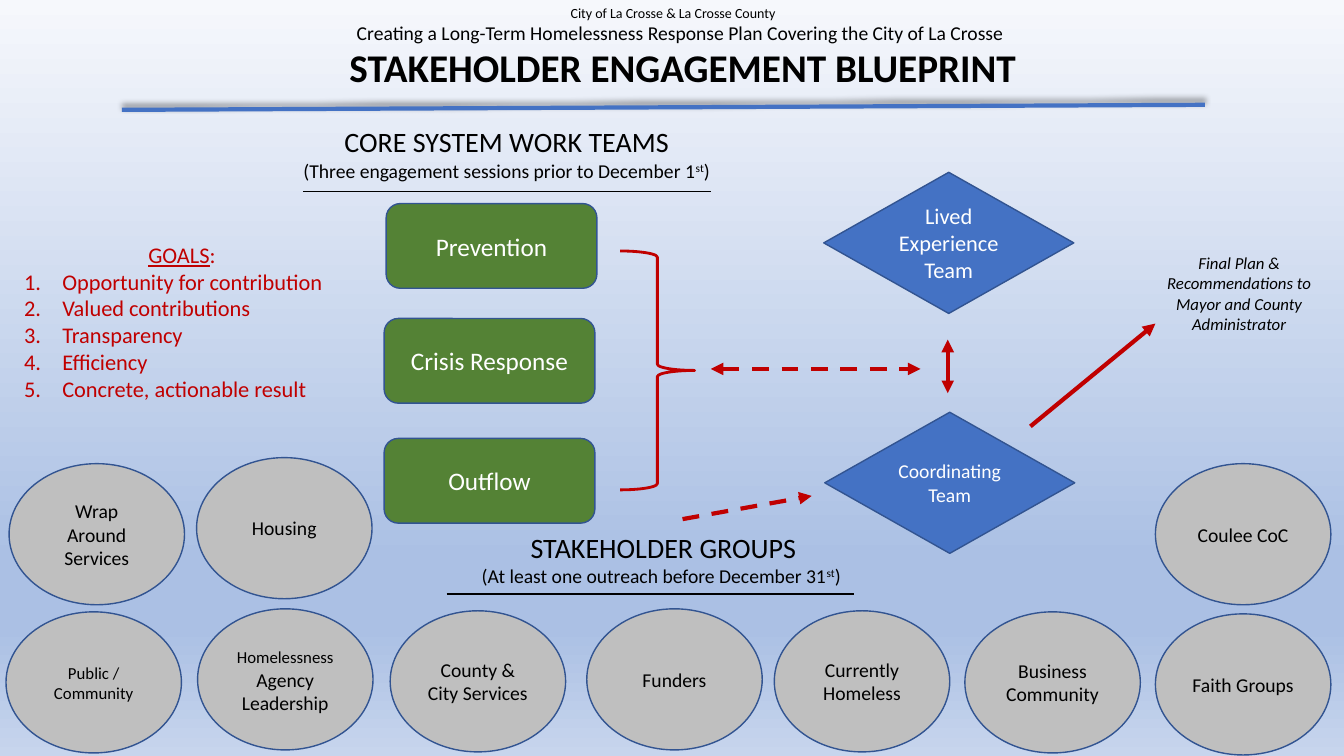
from lxml import etree
from pptx import Presentation
from pptx.dml.color import RGBColor
from pptx.enum.dml import MSO_LINE
from pptx.enum.shapes import MSO_CONNECTOR, MSO_SHAPE as SHAPE
from pptx.enum.text import MSO_ANCHOR, MSO_AUTO_SIZE, PP_ALIGN as ALIGN
from pptx.oxml import parse_xml
from pptx.oxml.ns import qn
from pptx.util import Inches, Pt

COLORS = {
    "black": "000000", "white": "FFFFFF", "red": "C00000", "blue": "4472C4",
    "outline": "325491", "green": "548235", "gray": "BFBFBF",
}
SKY = [(0, "F6F8FC"), (74, "ABC0E4"), (83, "ABC0E4"), (100, "C7D5ED")]
A_NS = "http://schemas.openxmlformats.org/drawingml/2006/main"


def rgb(name):
    return RGBColor.from_string(COLORS[name])


def add_line(slide, x1, y1, x2, y2, color="black", width=1.25,
             dash=False, head=False, tail=False):
    c = slide.shapes.add_connector(
        MSO_CONNECTOR.STRAIGHT, Inches(x1), Inches(y1), Inches(x2), Inches(y2))
    c.line.color.rgb = rgb(color)
    c.line.width = Pt(width)
    if dash:
        c.line.dash_style = MSO_LINE.DASH
    ln = c.line._get_or_add_ln()
    for tag, wanted in (("a:headEnd", head), ("a:tailEnd", tail)):
        if wanted:
            etree.SubElement(ln, qn(tag)).set("type", "triangle")
    etree.SubElement(c._element.spPr, qn("a:effectLst"))
    return c


def write(p, parts, size, color="black", align=ALIGN.CENTER):
    p.alignment = align
    p.font.name = "Calibri"
    p.font.size = Pt(size)
    p.font.color.rgb = rgb(color)
    runs = []
    for part in parts:
        r = p.add_run()
        r.text = part
        runs.append(r)
    return runs


def paragraphs(tf, count):
    return [tf.paragraphs[0]] + [tf.add_paragraph() for _ in range(count - 1)]


def add_text(slide, x, y, w, h):
    tf = slide.shapes.add_textbox(
        Inches(x), Inches(y), Inches(w), Inches(h)).text_frame
    tf.word_wrap = True
    tf.auto_size = MSO_AUTO_SIZE.SHAPE_TO_FIT_TEXT
    return tf


def add_node(slide, kind, x, y, w, h, lines, fill, color, size):
    sp = slide.shapes.add_shape(kind, Inches(x), Inches(y), Inches(w), Inches(h))
    sp.shadow.inherit = False
    sp.fill.solid()
    sp.fill.fore_color.rgb = rgb(fill)
    sp.line.color.rgb = rgb("outline")
    sp.line.width = Pt(1)
    tf = sp.text_frame
    tf.word_wrap = True
    tf.vertical_anchor = MSO_ANCHOR.MIDDLE
    for p, line in zip(paragraphs(tf, len(lines)), lines):
        write(p, [line], size, color)
    return sp


def paint_background(slide):
    fill = slide.background.fill
    fill.gradient()
    grad = slide._element.cSld.find(".//" + qn("a:gradFill"))
    stops = "".join(
        f'<a:gs pos="{pos * 1000}"><a:srgbClr val="{color}"/></a:gs>'
        for pos, color in SKY)
    new = parse_xml(
        f'<a:gradFill xmlns:a="{A_NS}" rotWithShape="1"><a:gsLst>{stops}</a:gsLst>'
        '<a:lin ang="5400000" scaled="0"/></a:gradFill>')
    grad.getparent().replace(grad, new)


def header(slide, x, y, w):
    rows = [
        (-0.08, 0, 0.27, 10, "City of La Crosse & La Crosse County "),
        (0, 0.16, 0.34, 14, "Creating a Long-Term Homelessness Response Plan "
                            "Covering the City of La Crosse "),
        (0, 0.38, 0.57, 28, "STAKEHOLDER ENGAGEMENT BLUEPRINT"),
    ]
    for dx, dy, h, size, text in rows:
        p = add_text(slide, x + dx, y + dy, w, h).paragraphs[0]
        write(p, [text], size)
    p.font.bold = True
    rule = add_line(slide, x + 1.1, y + 1.09, x + 11.84, y + 1.04, "blue", 3)
    rule._element.spPr.find(qn("a:effectLst")).append(parse_xml(
        f'<a:outerShdw xmlns:a="{A_NS}" blurRad="50800" dist="38100" '
        'dir="16200000" algn="b" rotWithShape="0"><a:srgbClr val="000000">'
        '<a:alpha val="40000"/></a:srgbClr></a:outerShdw>'))


def section_title(slide, x, y, w, title, note, rule_x, rule_y):
    tf = add_text(slide, x, y, w, 0.67)
    top, bottom = paragraphs(tf, 2)
    write(top, [title], 20)
    runs = write(bottom, note, 14)
    runs[1]._r.get_or_add_rPr().set("baseline", "30000")
    add_line(slide, rule_x, rule_y, rule_x + 4.04, rule_y)


def work_teams(slide, x, y):
    section_title(slide, x - 1.07, y - 0.83, 4.57, "CORE SYSTEM WORK TEAMS",
                  ["(Three engagement sessions prior to December 1", "st", ")"],
                  x - 0.8, y - 0.12)
    teams = [("Prevention", 0.02, 0), ("Crisis Response", 0, 1.14), ("Outflow", 0, 2.33)]
    for name, dx, dy in teams:
        add_node(slide, SHAPE.ROUNDED_RECTANGLE, x + dx, y + dy, 2.09, 0.84,
                 [name], "green", "white", 18)
    brace = slide.shapes.add_shape(SHAPE.RIGHT_BRACE, Inches(x + 2.34),
                                   Inches(y + 0.47), Inches(0.74), Inches(2.37))
    brace.shadow.inherit = False
    brace.fill.background()
    brace.line.color.rgb = rgb("red")
    brace.line.width = Pt(2)


def goals(slide, x, y, w, h):
    items = ["Opportunity for contribution", "Valued contributions",
             "Transparency", "Efficiency", "Concrete, actionable result"]
    first, *rest = paragraphs(add_text(slide, x, y, w, h), len(items) + 1)
    write(first, ["GOALS", ":"], 16, "red")[0].font.underline = True
    for p, item in zip(rest, items):
        write(p, [item], 16, "red", ALIGN.LEFT)
        pPr = p._p.get_or_add_pPr()
        pPr.set("marL", str(Inches(0.38)))
        pPr.set("indent", str(-Inches(0.38)))
        pPr.insert(0, parse_xml(
            f'<a:buAutoNum xmlns:a="{A_NS}" type="arabicPeriod"/>'))


def decision_flow(slide, x, y):
    diamonds = [(0, 0, 16, ["Lived Experience", "Team"]),
                (0.01, 2.38, 14, ["Coordinating", "Team"])]
    for dx, dy, size, lines in diamonds:
        add_node(slide, SHAPE.FLOWCHART_DECISION, x + dx, y + dy, 2.48, 1.4,
                 lines, "blue", "white", size)
    arrows = [
        (1.23, 1.66, 1.23, 2.19, False, True),
        (2.05, 2.52, 3.29, 1.5, False, False),
        (-1.4, 3.44, -0.12, 3.21, True, False),
        (-1.12, 1.95, 0.96, 1.95, True, True),
    ]
    for x1, y1, x2, y2, dash, both in arrows:
        add_line(slide, x + x1, y + y1, x + x2, y + y2, "red", 3, dash, both, True)
    p = add_text(slide, x + 3.17, y + 0.75, 1.9, 0.91).paragraphs[0]
    write(p, ["Final Plan & Recommendations to Mayor and County Administrator"], 12)
    p.font.italic = True


def stakeholder_groups(slide, x, y):
    section_title(slide, x - 0.14, y + 0.67, 13.32, "STAKEHOLDER GROUPS",
                  ["(At least one outreach before December 31", "st", ") "],
                  x + 4.37, y + 1.35)
    groups = [
        (0.03, 0.06, 14, ["Wrap Around", "Services"]),
        (1.89, 0, 14, ["Housing"]),
        (11.4, 0.06, 14, ["Coulee CoC"]),
        (0, 1.53, 12, ["Public / Community"]),
        (1.9, 1.5, 14, ["Homelessness Agency Leadership"]),
        (3.81, 1.52, 14, ["County & City Services"]),
        (5.76, 1.5, 14, ["Funders"]),
        (7.62, 1.52, 14, ["Currently Homeless"]),
        (9.51, 1.53, 14, ["Business", "Community"]),
        (11.4, 1.55, 14, ["Faith Groups"]),
    ]
    for dx, dy, size, lines in groups:
        sp = add_node(slide, SHAPE.OVAL, x + dx, y + dy, 1.74, 1.4,
                      lines, "gray", "black", size)
        p = sp.text_frame.paragraphs[0]
        if lines[0].startswith("Homelessness"):
            first, rest = lines[0].split(" ", 1)
            p.runs[0].text = first
            p.runs[0].font.size = Pt(12)
            p.add_run().text = " " + rest


def main():
    prs = Presentation()
    prs.slide_width, prs.slide_height = Inches(13.33), Inches(7.5)
    slide = prs.slides.add_slide(prs.slide_layouts[6])
    paint_background(slide)
    header(slide, 0.11, 0, 13.32)
    stakeholder_groups(slide, 0.06, 4.54)
    work_teams(slide, 3.81, 2.02)
    decision_flow(slide, 8.17, 1.71)
    goals(slide, 0.14, 2.34, 3.33, 2.22)
    prs.save("out.pptx")


if __name__ == "__main__":
    main()
